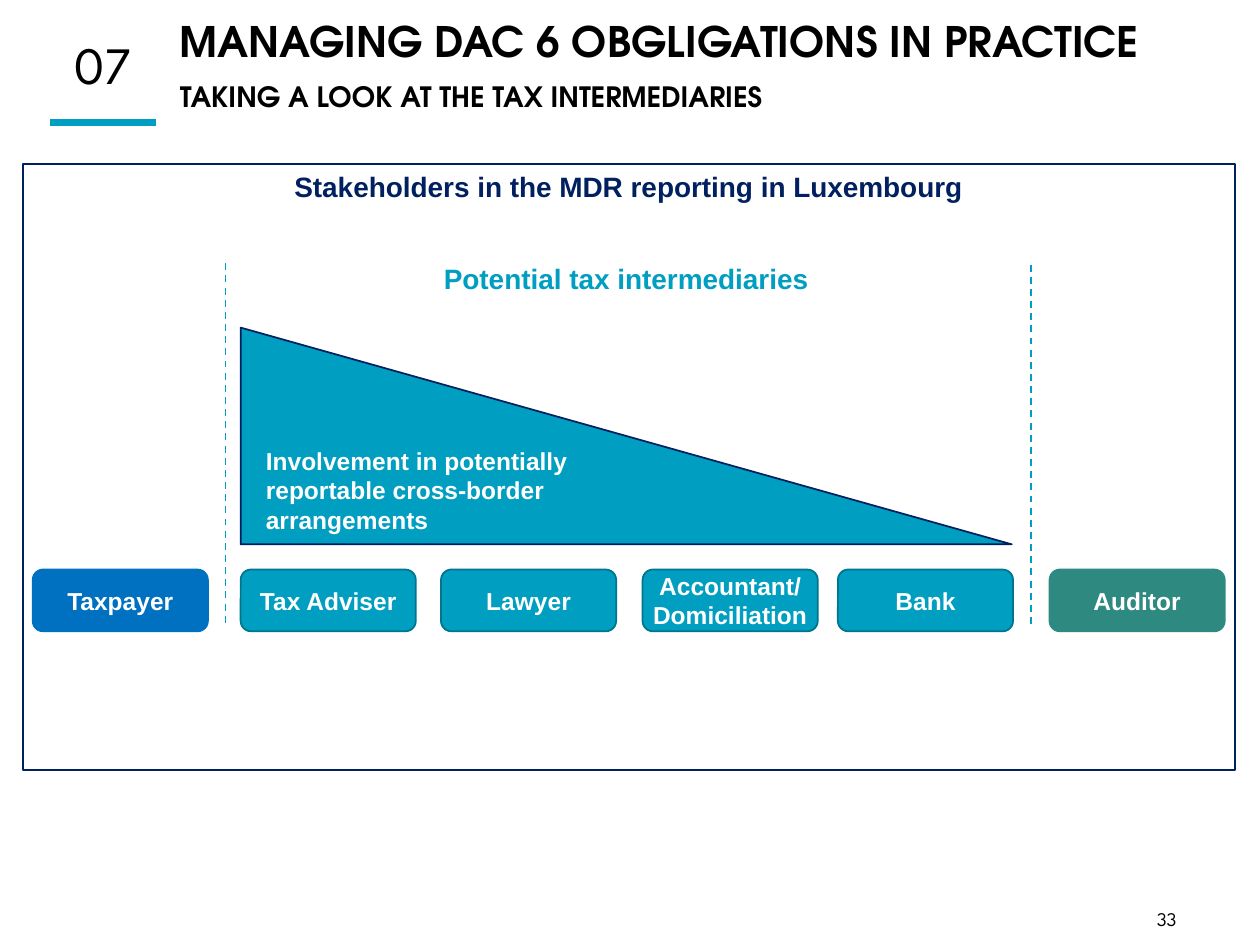
from pptx import Presentation
from pptx.dml.color import RGBColor
from pptx.enum.dml import MSO_LINE
from pptx.enum.shapes import MSO_CONNECTOR, MSO_SHAPE
from pptx.enum.text import MSO_ANCHOR as Anchor, PP_ALIGN as Align
from pptx.util import Inches, Pt
from lxml import etree

NAVY, TEAL, DARK_TEAL, BLUE, GREEN = "002060", "009EC0", "00758E", "0070C0", "2E8A81"
BLACK, WHITE = "000000", "FFFFFF"
DRAWING_NS = "http://schemas.openxmlformats.org/drawingml/2006/main"


def color(value):
    return RGBColor.from_string(value)


def write(box, lines, font, ink, bold=True, align=Align.CENTER, anchor=Anchor.MIDDLE):
    """Fill a box with (text, size) lines, one paragraph each."""
    frame = box.text_frame
    frame.word_wrap = True
    frame.vertical_anchor = anchor
    for index, (text, size) in enumerate(lines):
        para = frame.add_paragraph() if index else frame.paragraphs[0]
        para.text = text
        para.alignment = align
        for span in para.runs:
            span.font.name = font
            span.font.size = Pt(size)
            span.font.bold = bold
            span.font.color.rgb = color(ink)


deck = Presentation()
deck.slide_width, deck.slide_height = Inches(10), Inches(7.5)
page = deck.slides.add_slide(deck.slide_layouts[6])
shapes = page.shapes

# Frame, stakeholder boxes and triangle
frame_box = shapes.add_shape(
    MSO_SHAPE.RECTANGLE, Inches(0.18), Inches(1.3), Inches(9.62), Inches(4.81))
frame_box.shadow.inherit = False
frame_box.fill.background()
frame_box.line.color.rgb = color(NAVY)
frame_box.line.width = Pt(1)
write(frame_box, [("Stakeholders in the MDR reporting in Luxembourg", 16)],
      "Arial", NAVY, anchor=Anchor.TOP)

stakeholders = [
    ("Taxpayer", 0.26, BLUE, BLUE),
    ("Tax Adviser", 1.91, TEAL, DARK_TEAL),
    ("Lawyer", 3.5, TEAL, DARK_TEAL),
    ("Accountant/ Domiciliation", 5.1, TEAL, DARK_TEAL),
    ("Bank", 6.65, TEAL, DARK_TEAL),
    ("Auditor", 8.33, GREEN, GREEN),
]
for name, left, fill, outline in stakeholders:
    box = shapes.add_shape(
        MSO_SHAPE.ROUNDED_RECTANGLE, Inches(left), Inches(4.52), Inches(1.39), Inches(0.49))
    box.shadow.inherit = False
    box.fill.solid()
    box.fill.fore_color.rgb = color(fill)
    box.line.color.rgb = color(outline)
    box.line.width = Pt(1)
    box.text_frame.margin_left = box.text_frame.margin_right = Inches(0.04)
    write(box, [(name, 14)], "Arial", WHITE)

triangle = shapes.add_shape(
    MSO_SHAPE.ISOSCELES_TRIANGLE, Inches(4.11), Inches(0.4), Inches(1.72), Inches(6.12))
triangle.rotation = 90
triangle.adjustments[0] = 1
triangle.shadow.inherit = False
triangle.fill.solid()
triangle.fill.fore_color.rgb = color(TEAL)
triangle.line.color.rgb = color(NAVY)
triangle.line.width = Pt(1)
triangle.text_frame.margin_bottom = Inches(0.2)
write(triangle, [("Involvement in potentially reportable cross-border arrangements", 14)],
      "Arial", WHITE, align=Align.LEFT)
triangle.text_frame._txBody.bodyPr.set("vert", "vert270")

# Number underline and dashed separators
lines = [
    (0.4, 0.97, 1.24, 0.97, 4, None),
    (1.79, 2.09, 1.79, 4.98, 1, MSO_LINE.DASH),
    (8.18, 2.1, 8.18, 4.99, 1, MSO_LINE.DASH),
]
for start_x, start_y, end_x, end_y, width, dash in lines:
    line = shapes.add_connector(
        MSO_CONNECTOR.STRAIGHT, Inches(start_x), Inches(start_y), Inches(end_x), Inches(end_y))
    line.line.color.rgb = color(TEAL)
    line.line.width = Pt(width)
    if dash:
        line.line.dash_style = dash
    etree.SubElement(line._element.spPr, f"{{{DRAWING_NS}}}effectLst")

# Text boxes
number = shapes.add_textbox(Inches(0.47), Inches(0.27), Inches(0.7), Inches(0.53))
write(number, [("07", 30)], "League Spartan", BLACK, bold=False)

title = shapes.add_textbox(Inches(1.33), Inches(0.27), Inches(8.39), Inches(0.53))
write(title, [("MANAGING DAC 6 OBGLIGATIONS IN PRACTICE", 24),
              ("TAKING A LOOK AT THE TAX INTERMEDIARIES", 16)],
      "TeX Gyre Adventor", BLACK, align=Align.LEFT)
title.text_frame.paragraphs[1].space_before = Pt(10)
for para in [*number.text_frame.paragraphs, *title.text_frame.paragraphs]:
    para.line_spacing = 0.9

heading = shapes.add_textbox(Inches(3.3), Inches(2.03), Inches(3.34), Inches(0.37))
write(heading, [("Potential tax intermediaries", 16)], "Arial", TEAL, anchor=Anchor.TOP)

page_number = shapes.add_textbox(Inches(8.96), Inches(7.15), Inches(0.6), Inches(0.29))
write(page_number, [("33", 11)], "League Spartan", BLACK, bold=False, anchor=Anchor.TOP)

deck.save("out.pptx")
